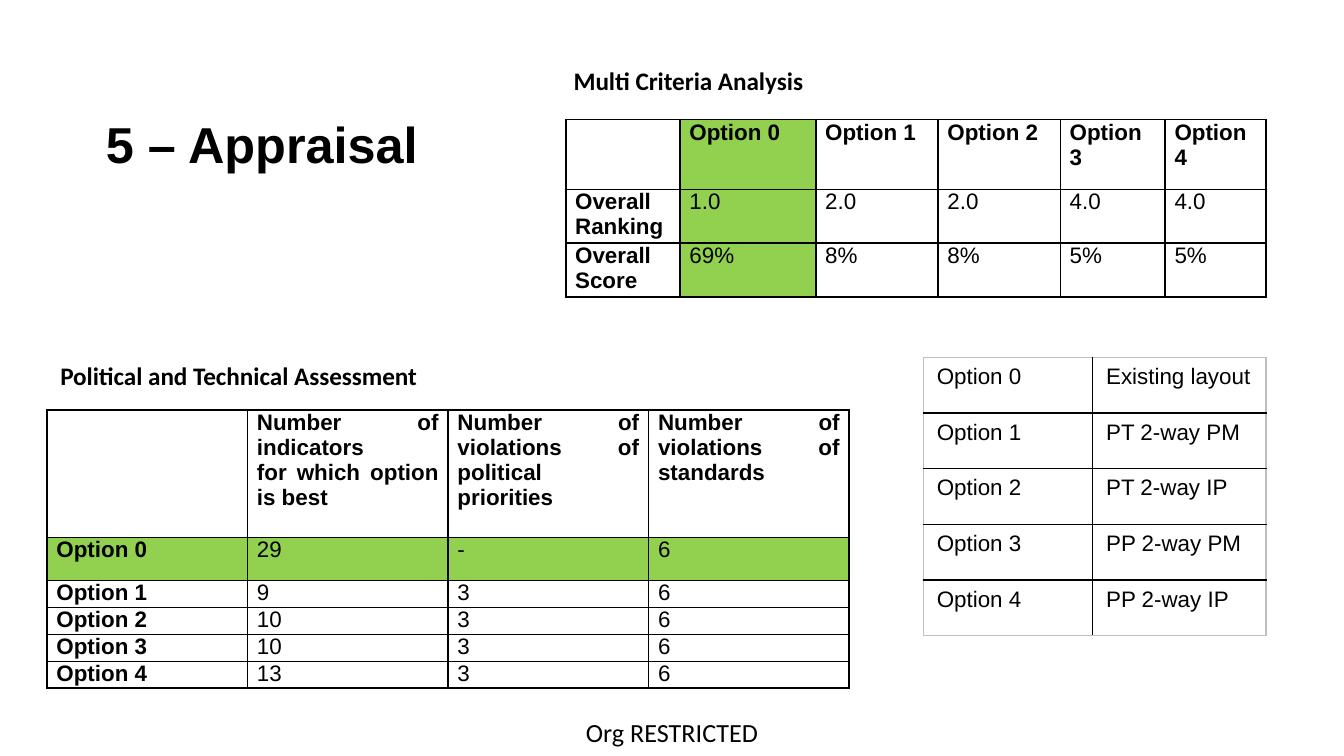
from dataclasses import dataclass

from lxml.etree import SubElement
from pptx import Presentation
from pptx.dml.color import RGBColor
from pptx.enum.text import MSO_ANCHOR, PP_ALIGN
from pptx.oxml.ns import qn
from pptx.util import Inches, Pt


@dataclass(frozen=True)
class Theme:
    """Colours, fonts and type sizes of the slide."""
    black: str = "000000"
    grey: str = "BFBFBF"
    green: str = "92D050"
    body_font: str = "Arial"
    label_font: str = "Calibri"
    title_size: float = 27
    footer_size: float = 14
    label_size: float = 13.5
    table_size: float = 12
    border_width: float = 1


THEME = Theme()
OPTIONS = [f"Option {number}" for number in range(5)]


def style_paragraph(para, font_name, size, bold, align):
    """Set the font and alignment of a paragraph."""
    para.alignment = align
    para.font.name = font_name
    para.font.size = Pt(size)
    para.font.bold = bold
    para.font.color.rgb = RGBColor.from_string(THEME.black)


def add_text(page, text, place, font_name, size, bold=True, align=PP_ALIGN.LEFT,
             anchor=MSO_ANCHOR.TOP):
    """Add a one-paragraph text box."""
    box = page.shapes.add_textbox(*map(Inches, place))
    frame = box.text_frame
    frame.word_wrap = True
    frame.vertical_anchor = anchor
    frame.text = text
    style_paragraph(frame.paragraphs[0], font_name, size, bold, align)
    return box


def add_border(cell, side, color):
    """Draw one side of a cell."""
    line = SubElement(cell._tc.get_or_add_tcPr(), qn(f"a:{side}"),
                      w=str(Pt(THEME.border_width)))
    fill = SubElement(line, qn("a:solidFill"))
    SubElement(fill, qn("a:srgbClr"), val=color)


def add_grid(page, place, widths, heights, rows, outer_color=THEME.black,
             compact=True, is_bold=lambda row, column: row == 0 or column == 0,
             is_green=lambda row, column: False):
    """Add a bordered table whose cells follow the given style rules."""
    frame = page.shapes.add_table(len(heights), len(widths), *map(Inches, place),
                                  Inches(sum(widths)), Inches(sum(heights)))
    table = frame.table
    table.first_row = table.horz_banding = False
    for column, width in zip(table.columns, widths):
        column.width = Inches(width)
    for row, height in zip(table.rows, heights):
        row.height = Inches(height)
    last_row, last_column = len(heights) - 1, len(widths) - 1
    for r, values in enumerate(rows):
        for c, text in enumerate(values):
            cell = table.cell(r, c)
            if compact:
                cell.margin_left = cell.margin_right = Inches(0.07)
                cell.margin_top = cell.margin_bottom = 0
            edges = {"lnL": c == 0, "lnR": c == last_column,
                     "lnT": r == 0, "lnB": r == last_row}
            for side, is_outer in edges.items():
                add_border(cell, side, outer_color if is_outer else THEME.black)
            if is_green(r, c):
                cell.fill.solid()
                cell.fill.fore_color.rgb = RGBColor.from_string(THEME.green)
            else:
                cell.fill.background()
            cell.text = text
            style_paragraph(cell.text_frame.paragraphs[0], THEME.body_font,
                            THEME.table_size, is_bold(r, c),
                            PP_ALIGN.JUSTIFY if compact else PP_ALIGN.LEFT)


def add_headings(page):
    """Add the title, the table labels and the footer."""
    title = add_text(page, "5 – Appraisal", (0.69, 0.55, 8.62, 1.09), THEME.body_font,
                     THEME.title_size, anchor=MSO_ANCHOR.MIDDLE)
    title.text_frame.paragraphs[0].line_spacing = 0.9
    for text, left, top in (("Multi Criteria Analysis", 4.17, 0.44),
                            ("Political and Technical Assessment", 0.35, 2.63)):
        add_text(page, text, (left, top, 4.52, 0.33), THEME.label_font, THEME.label_size)
    footer = add_text(page, "Org RESTRICTED", (4.01, 5.28, 1.98, 0.34), THEME.label_font,
                      THEME.footer_size, False, PP_ALIGN.CENTER, MSO_ANCHOR.MIDDLE)
    frame = footer.text_frame
    frame.margin_left = frame.margin_right = frame.margin_top = frame.margin_bottom = 0


def add_tables(page):
    """Add the assessment, criteria and option tables."""
    scores = [("29", "-", "6"), ("9", "3", "6"), ("10", "3", "6"),
              ("10", "3", "6"), ("13", "3", "6")]
    assessment = [("", "Number of indicators\vfor which option is best",
                   "Number of violations of political priorities",
                   "Number of violations of standards")]
    assessment += [(option, *values) for option, values in zip(OPTIONS, scores)]
    add_grid(page, (0.35, 3.05), [5.97 / 4] * 4, [0.95, 0.32] + [0.19] * 4, assessment,
             is_green=lambda row, column: row == 1)

    criteria = [("", *OPTIONS),
                ("Overall Ranking", "1.0", "2.0", "2.0", "4.0", "4.0"),
                ("Overall Score", "69%", "8%", "8%", "5%", "5%")]
    add_grid(page, (4.21, 0.89), [0.85, 1.01, 0.91, 0.91, 0.78, 0.75],
             [0.52, 0.4, 0.4], criteria, is_green=lambda row, column: column == 1)

    layouts = ["Existing layout", "PT 2-way PM", "PT 2-way IP", "PP 2-way PM",
               "PP 2-way IP"]
    add_grid(page, (6.87, 2.66), [1.26, 1.29], [2.07 / 5] * 5, list(zip(OPTIONS, layouts)),
             outer_color=THEME.grey, compact=False, is_bold=lambda row, column: False)


def main():
    """Build and save the slide."""
    deck = Presentation()
    deck.slide_width = Inches(10)
    deck.slide_height = deck.slide_width * 9 // 16
    page = deck.slides.add_slide(deck.slide_layouts[6])
    add_headings(page)
    add_tables(page)
    deck.save("out.pptx")


if __name__ == "__main__":
    main()
